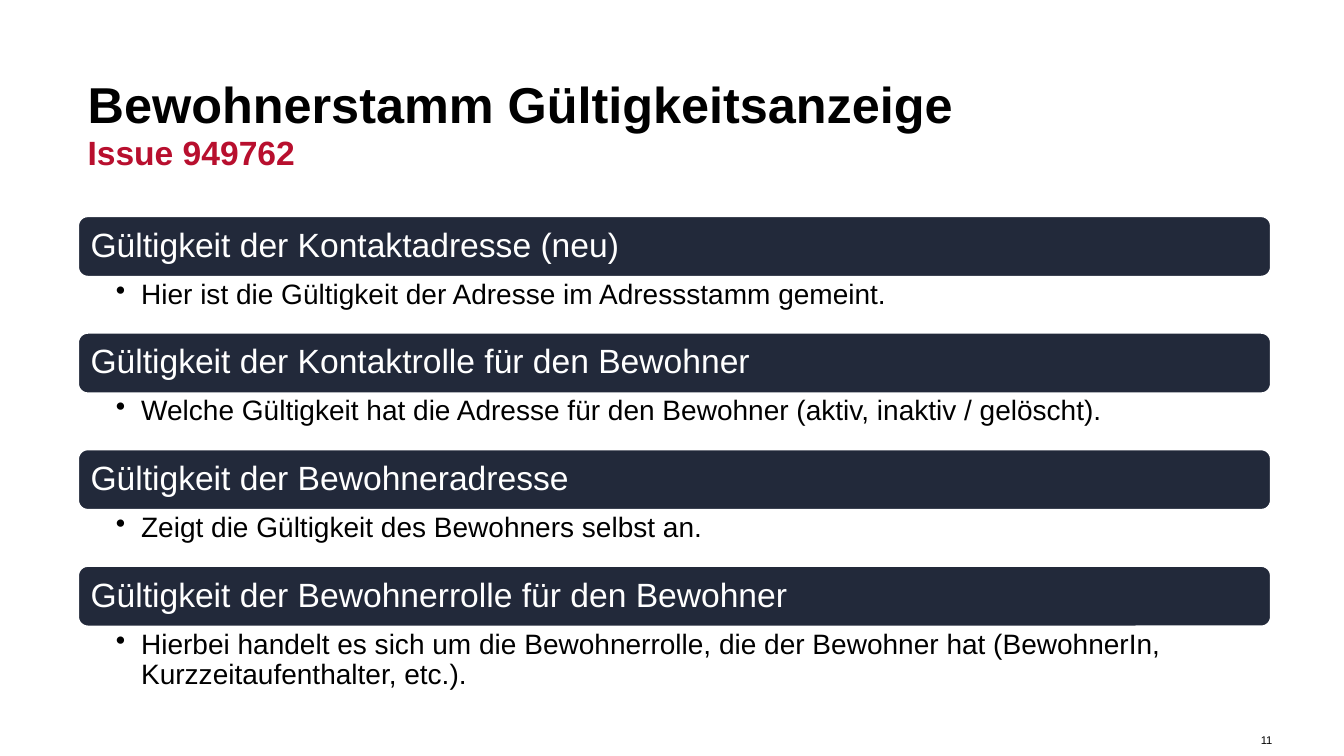
from pptx import Presentation
from pptx.dml.color import RGBColor
from pptx.enum.shapes import MSO_SHAPE
from pptx.enum.text import MSO_ANCHOR, MSO_AUTO_SIZE, PP_ALIGN
from pptx.oxml import parse_xml
from pptx.oxml.ns import nsdecls
from pptx.util import Inches, Pt

BLACK = RGBColor(0x00, 0x00, 0x00)
WHITE = RGBColor(0xFF, 0xFF, 0xFF)
NAVY = RGBColor(0x22, 0x29, 0x3A)
RED = RGBColor(0xB8, 0x0F, 0x2E)

ROUNDED = MSO_SHAPE.ROUNDED_RECTANGLE
TOP, MIDDLE, BOTTOM = MSO_ANCHOR.TOP, MSO_ANCHOR.MIDDLE, MSO_ANCHOR.BOTTOM
LEFT_ALIGN, RIGHT_ALIGN = PP_ALIGN.LEFT, PP_ALIGN.RIGHT
NO_AUTOFIT = MSO_AUTO_SIZE.NONE

LEFT, WIDTH = Inches(0.77), Inches(11.84)
FIRST_TOP, LAST_TOP = 2.14, 5.61
BAR_HEIGHT = 0.61

SECTIONS = [
    ("Gültigkeit der Kontaktadresse (neu)",
     "Hier ist die Gültigkeit der Adresse im Adressstamm gemeint."),
    ("Gültigkeit der Kontaktrolle für den Bewohner",
     "Welche Gültigkeit hat die Adresse für den Bewohner (aktiv, inaktiv / gelöscht)."),
    ("Gültigkeit der Bewohneradresse",
     "Zeigt die Gültigkeit des Bewohners selbst an."),
    ("Gültigkeit der Bewohnerrolle für den Bewohner",
     "Hierbei handelt es sich um die Bewohnerrolle, die der Bewohner hat "
     "(BewohnerIn, Kurzzeitaufenthalter, etc.)."),
]


def write(shape, text, size, color, bold=False, anchor=TOP, align=LEFT_ALIGN,
          insets=(0.1, 0.05, 0.1, 0.05), bullet=False):
    frame = shape.text_frame
    left, top, right, bottom = map(Inches, insets)
    frame_format = {
        "word_wrap": True, "auto_size": NO_AUTOFIT, "vertical_anchor": anchor,
        "margin_left": left, "margin_top": top,
        "margin_right": right, "margin_bottom": bottom,
    }
    for name, value in frame_format.items():
        setattr(frame, name, value)
    frame.text = text
    paragraph = frame.paragraphs[0]
    paragraph.alignment = align
    paragraph.line_spacing = 0.9
    if bullet:
        properties = paragraph._p.get_or_add_pPr()
        properties.set("marL", str(Inches(0.25)))
        properties.set("indent", str(Inches(-0.25)))
        properties.append(parse_xml(f'<a:buChar {nsdecls("a")} char="•"/>'))
    font = paragraph.runs[0].font
    for name, value in {"name": "Arial", "size": Pt(size), "bold": bold}.items():
        setattr(font, name, value)
    font.color.rgb = color


prs = Presentation()
prs.slide_width, prs.slide_height = Inches(13.33), Inches(7.5)
slide = prs.slides.add_slide(prs.slide_layouts[5])
shapes = slide.shapes

# Title and issue number
title = shapes.title
title.left, title.top, title.width, title.height = LEFT, Inches(0.74), WIDTH, Inches(0.55)
write(title, "Bewohnerstamm Gültigkeitsanzeige", 36, BLACK, bold=True)
issue = shapes.add_textbox(LEFT, Inches(1.3), WIDTH, Inches(0.43))
write(issue, "Issue 949762", 24, RED, bold=True)

# Heading bars, each with its explanation below
pitch = (LAST_TOP - FIRST_TOP) / (len(SECTIONS) - 1)
for index, (heading, explanation) in enumerate(SECTIONS):
    top = FIRST_TOP + index * pitch
    bar = shapes.add_shape(ROUNDED, LEFT, Inches(top), WIDTH, Inches(BAR_HEIGHT))
    bar.shadow.inherit = False
    bar.fill.solid()
    bar.fill.fore_color.rgb = NAVY
    bar.line.color.rgb = WHITE
    bar.line.width = Pt(2)
    write(bar, heading, 24, WHITE, anchor=MIDDLE, insets=(0.1, 0.1, 0.1, 0.1))

    detail = shapes.add_textbox(LEFT, Inches(top + BAR_HEIGHT), WIDTH, Inches(0.54))
    write(detail, explanation, 20, BLACK, insets=(0.38, 0.03, 0.16, 0.03), bullet=True)

# Page number
page_number = shapes.add_textbox(Inches(12.4), Inches(7.28), Inches(0.22), Inches(0.13))
write(page_number, "11", 8, BLACK, anchor=BOTTOM, align=RIGHT_ALIGN, insets=(0, 0, 0, 0))

prs.save("out.pptx")
